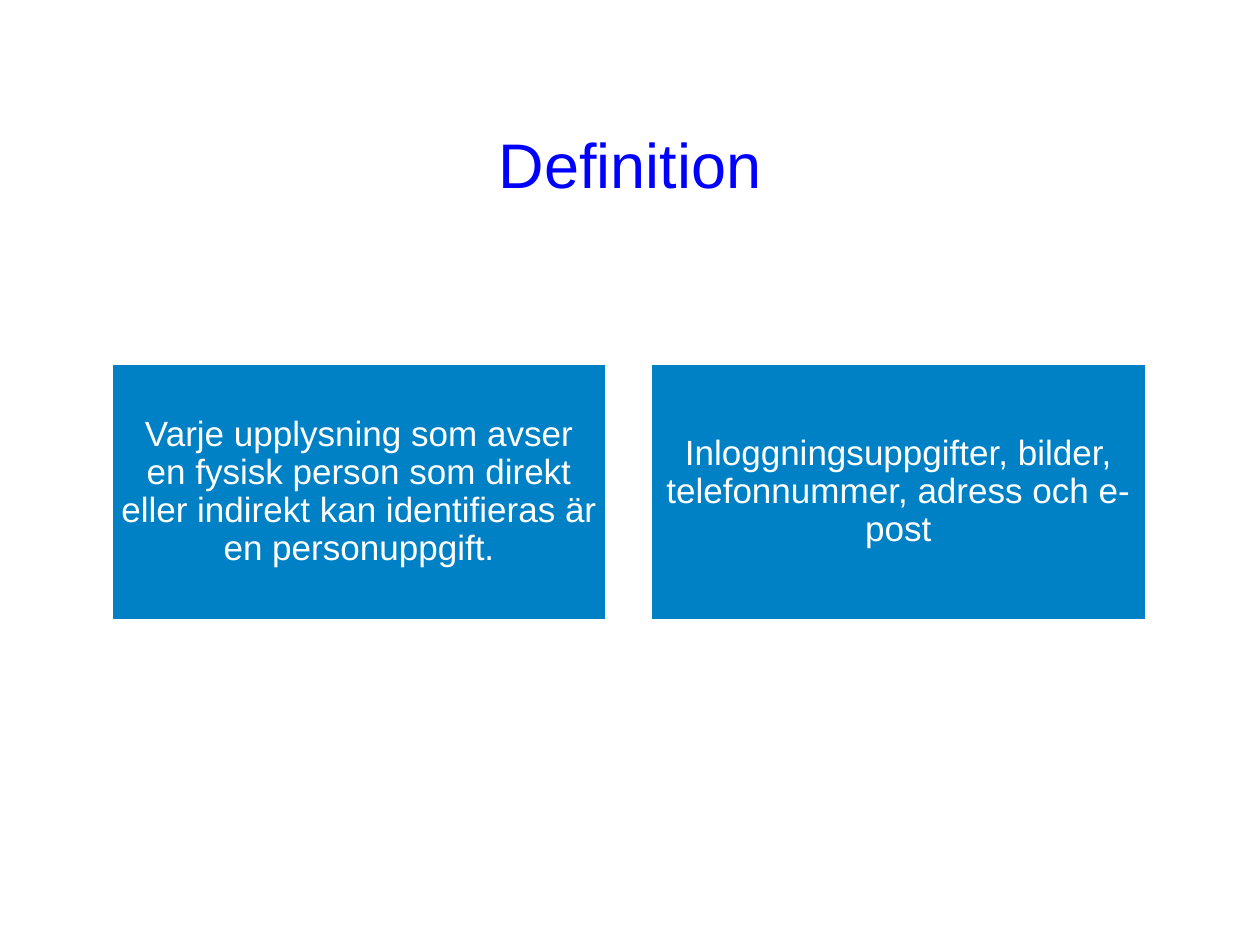
from pptx import Presentation
from pptx.dml.color import RGBColor
from pptx.enum.shapes import MSO_SHAPE
from pptx.enum.text import MSO_ANCHOR, PP_ALIGN
from pptx.util import Inches, Pt

RECTANGLE = MSO_SHAPE.RECTANGLE
MIDDLE = MSO_ANCHOR.MIDDLE
CENTER = PP_ALIGN.CENTER


def color(hex_value):
    return RGBColor.from_string(hex_value)


def write_text(shape, text, size, hex_value):
    frame = shape.text_frame
    frame.word_wrap = True
    frame.vertical_anchor = MIDDLE
    paragraph = frame.paragraphs[0]
    paragraph.text = text
    paragraph.alignment = CENTER
    paragraph.font.name = "Arial"
    paragraph.font.size = Pt(size)
    paragraph.font.color.rgb = color(hex_value)
    return frame


presentation = Presentation()
presentation.slide_width = Inches(10)
presentation.slide_height = Inches(7.5)
slide = presentation.slides.add_slide(presentation.slide_layouts[6])

# Title
title = slide.shapes.add_textbox(Inches(0.75), Inches(0.67), Inches(8.5), Inches(1.25))
write_text(title, "Definition", 36, "0000FF")

# Two definition boxes side by side
box_texts = [
    "Varje upplysning som avser en fysisk person som direkt eller indirekt "
    "kan identifieras är en personuppgift.",
    "Inloggningsuppgifter, bilder, telefonnummer, adress och e-post",
]
box_left, box_width, box_gap = 0.88, 3.94, 0.34
for index, text in enumerate(box_texts):
    left = box_left + index * (box_width + box_gap)
    box = slide.shapes.add_shape(
        RECTANGLE, Inches(left), Inches(2.88), Inches(box_width), Inches(2.05))
    box.shadow.inherit = False
    box.fill.solid()
    box.fill.fore_color.rgb = color("0081C5")
    box.line.color.rgb = color("FFFFFF")
    box.line.width = Pt(2)
    frame = write_text(box, text, 20, "FFFFFF")
    frame.margin_left = frame.margin_right = Inches(0.08)
    frame.margin_top = frame.margin_bottom = Inches(0.08)
    frame.paragraphs[0].line_spacing = 0.9

presentation.save("out.pptx")
